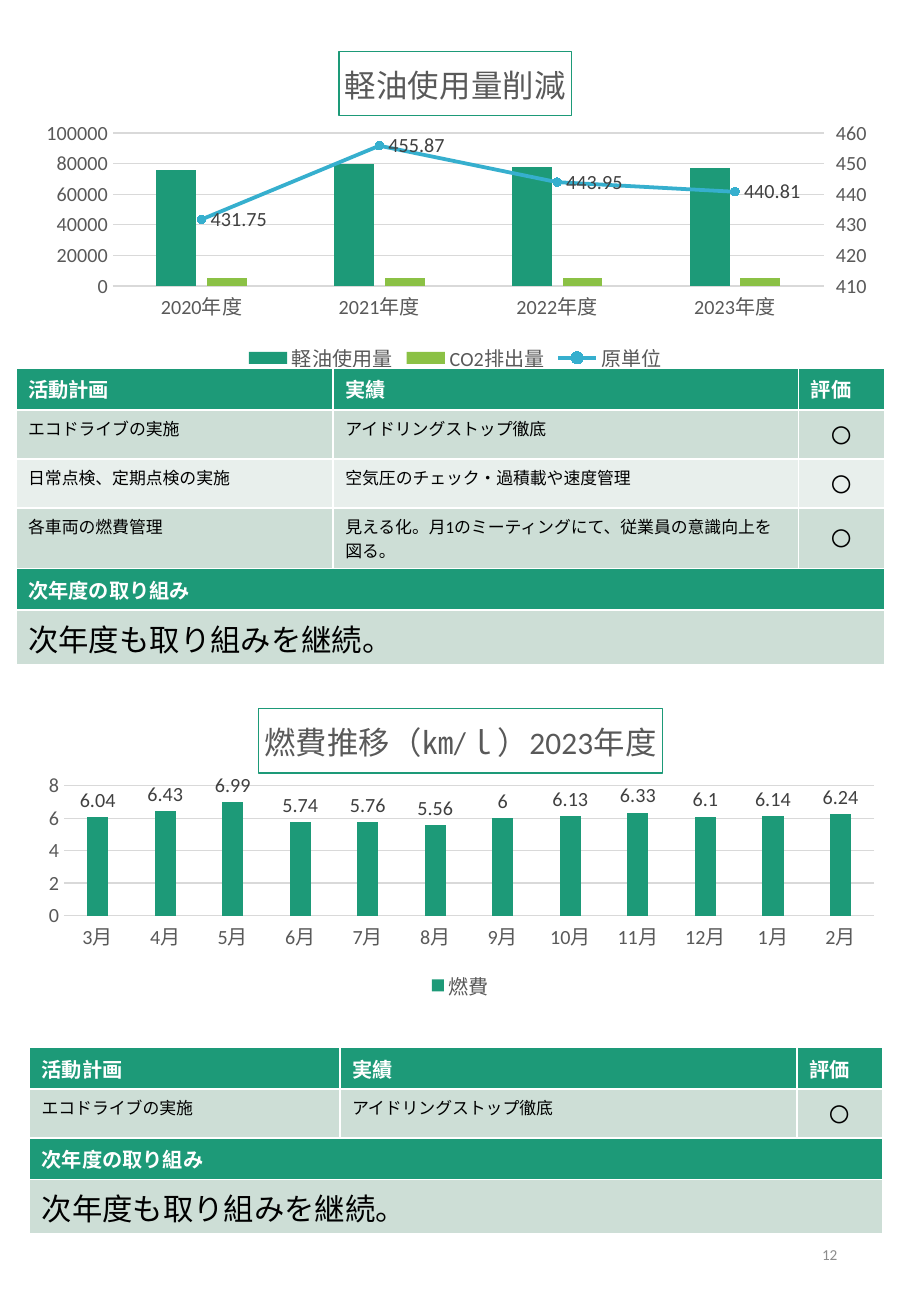
from lxml import etree
from pptx import Presentation
from pptx.chart.data import CategoryChartData
from pptx.dml.color import RGBColor
from pptx.enum.chart import (XL_CHART_TYPE, XL_LABEL_POSITION, XL_LEGEND_POSITION,
                             XL_MARKER_STYLE, XL_TICK_MARK)
from pptx.enum.text import MSO_ANCHOR, PP_ALIGN
from pptx.oxml import parse_xml
from pptx.oxml.ns import nsdecls, qn
from pptx.util import Pt

COLUMNS = XL_CHART_TYPE.COLUMN_CLUSTERED
NO_TICK = XL_TICK_MARK.NONE
BOTTOM = XL_LEGEND_POSITION.BOTTOM
RIGHT_OF, OUTSIDE = XL_LABEL_POSITION.RIGHT, XL_LABEL_POSITION.OUTSIDE_END
CIRCLE = XL_MARKER_STYLE.CIRCLE
MIDDLE = MSO_ANCHOR.MIDDLE
CENTER, ALIGN_RIGHT = PP_ALIGN.CENTER, PP_ALIGN.RIGHT

GREEN = RGBColor(0x1D, 0x9A, 0x78)
LIME = RGBColor(0x8B, 0xC1, 0x45)
BLUE = RGBColor(0x36, 0xAF, 0xCE)
BAND_DARK = RGBColor(0xCD, 0xDE, 0xD6)
BAND_LIGHT = RGBColor(0xE8, 0xEF, 0xEC)
WHITE = RGBColor(0xFF, 0xFF, 0xFF)
BLACK = RGBColor(0, 0, 0)
CHART_GREY = RGBColor(0x59, 0x59, 0x59)
LABEL_GREY = RGBColor(0x40, 0x40, 0x40)
GRID_GREY = RGBColor(0xD9, 0xD9, 0xD9)
PAGE_GREY = RGBColor(0x8C, 0x8C, 0x8C)
FONT = "Calibri"

# box is left, top, width, height; plot is x, y, w, h as shares of the box
DIESEL_CHART = dict(
    title="軽油使用量削減", box=(16, 22.5, 508, 201.5), plot=(0.1, 0.28, 0.83, 0.45),
    categories=["2020年度", "2021年度", "2022年度", "2023年度"],
    series=[("軽油使用量", [76000, 80000, 78000, 77000], GREEN),
            ("CO2排出量", [5000, 5000, 5000, 5000], LIME),
            ("原単位", [431.75, 455.87, 443.95, 440.81], BLUE)],
    top=100000, step=20000)
MILEAGE_CHART = dict(
    title="燃費推移（㎞/ｌ）2023年度", box=(17.5, 412.5, 511, 183.5),
    plot=(0.04, 0.29, 0.94, 0.42),
    categories=[f"{m}月" for m in [*range(3, 13), 1, 2]],
    series=[("燃費", [6.04, 6.43, 6.99, 5.74, 5.76, 5.56,
                    6, 6.13, 6.33, 6.1, 6.14, 6.24], GREEN)],
    top=8, step=2)

HEADER = ("活動計画", "実績", "評価")
ECO_DRIVE = ("エコドライブの実施", "アイドリングストップ徹底", "〇")
NEXT_HEADING = "次年度の取り組み"
NEXT_PLAN = "次年度も取り組みを継続。"
DIESEL_TABLE = dict(
    at=(9.5, 218), widths=(188, 276, 51), heights=(25, 29, 29, 36, 24.5, 32.5),
    actions=[ECO_DRIVE,
             ("日常点検、定期点検の実施", "空気圧のチェック・過積載や速度管理", "〇"),
             ("各車両の燃費管理",
              "見える化。月1のミーティングにて、従業員の意識向上を図る。", "〇")])
MILEAGE_TABLE = dict(
    at=(17.5, 621), widths=(184, 271, 51), heights=(24.5, 29, 24.5, 32.5),
    actions=[ECO_DRIVE])

LINE_CHART = f"""<c:lineChart {nsdecls("c")}><c:grouping val="standard"/>
<c:varyColors val="0"/><c:marker val="1"/><c:axId val="501"/><c:axId val="502"/></c:lineChart>"""
RIGHT_AXIS = f"""<c:valAx {nsdecls("c", "a")}><c:axId val="502"/><c:scaling>
<c:orientation val="minMax"/><c:max val="460"/><c:min val="410"/></c:scaling>
<c:delete val="0"/><c:axPos val="r"/><c:numFmt formatCode="General" sourceLinked="0"/>
<c:majorTickMark val="out"/><c:minorTickMark val="none"/><c:tickLblPos val="nextTo"/>
<c:spPr><a:ln><a:noFill/></a:ln></c:spPr>
<c:crossAx val="501"/><c:crosses val="max"/><c:majorUnit val="10"/></c:valAx>"""
UNSEEN_AXIS = f"""<c:catAx {nsdecls("c")}><c:axId val="501"/><c:scaling>
<c:orientation val="minMax"/></c:scaling><c:delete val="1"/><c:axPos val="b"/>
<c:crossAx val="502"/></c:catAx>"""


def style(font, size, color, bold=False):
    font.name, font.size, font.bold = FONT, Pt(size), bold
    font.color.rgb = color


def place_plot(chart, shares):
    """Fix the inner plot area at the given shares of the chart."""
    area = chart._chartSpace.find(".//" + qn("c:plotArea"))
    for old in area.findall(qn("c:layout")):
        area.remove(old)
    layout = etree.Element(qn("c:layout"))
    manual = etree.SubElement(layout, qn("c:manualLayout"))
    settings = [("layoutTarget", "inner"), ("xMode", "edge"), ("yMode", "edge")]
    for tag, value in settings + list(zip("xywh", shares)):
        etree.SubElement(manual, qn("c:" + tag)).set("val", str(value))
    area.insert(0, layout)


def add_labels(series, position):
    labels = series.data_labels
    labels.show_value = True
    labels.position = position
    style(labels.font, 11.9, LABEL_GREY)


def add_column_chart(s, title, box, plot, categories, series, top, step):
    data = CategoryChartData()
    data.categories = categories
    for name, values, _ in series:
        data.add_series(name, values)
    chart = s.shapes.add_chart(COLUMNS, *map(Pt, box), data).chart
    style(chart.font, 11.9, CHART_GREY)
    chart.has_title = True
    tf = chart.chart_title.text_frame
    tf.text = title
    style(tf.paragraphs[0].runs[0].font, 18.6, CHART_GREY)
    chart.chart_title.format.line.color.rgb = GREEN
    chart.chart_title.format.line.width = Pt(0.75)
    chart.has_legend = True
    chart.legend.position = BOTTOM
    chart.legend.include_in_layout = False
    bars = chart.plots[0]
    bars.gap_width, bars.overlap, bars.vary_by_categories = 219, -27, False
    for bar, (_, _, color) in zip(bars.series, series):
        bar.format.fill.solid()
        bar.format.fill.fore_color.rgb = color
    cat, val = chart.category_axis, chart.value_axis
    cat.major_tick_mark = val.major_tick_mark = NO_TICK
    val.minimum_scale, val.maximum_scale, val.major_unit = 0, top, step
    val.format.line.fill.background()
    for line in (cat.format.line, val.major_gridlines.format.line):
        line.color.rgb = GRID_GREY
        line.width = Pt(0.75)
    place_plot(chart, plot)
    return chart


def move_last_series_to_line(chart, color):
    """Draw the last series as a line on a second axis at the right."""
    area = chart._chartSpace.find(".//" + qn("c:plotArea"))
    bar_chart = area.find(qn("c:barChart"))
    ser = bar_chart.findall(qn("c:ser"))[-1]
    for tag in ("c:invertIfNegative", "c:spPr"):
        for el in ser.findall(qn(tag)):
            ser.remove(el)
    line_chart, right_axis, unseen_axis = map(
        parse_xml, (LINE_CHART, RIGHT_AXIS, UNSEEN_AXIS))
    line_chart.insert(2, ser)
    bar_chart.addnext(line_chart)
    area.find(qn("c:valAx")).addnext(right_axis)
    right_axis.addnext(unseen_axis)

    line = chart.plots[1].series[0]
    line.smooth = False
    line.format.line.color.rgb = color
    line.format.line.width = Pt(2.25)
    line.marker.style, line.marker.size = CIRCLE, 5
    line.marker.format.fill.solid()
    line.marker.format.fill.fore_color.rgb = color
    line.marker.format.line.color.rgb = color
    add_labels(line, RIGHT_OF)


def fill_cell(cell, text, fill, size, color=BLACK, bold=False):
    cell.fill.solid()
    cell.fill.fore_color.rgb = fill
    cell.text = text
    style(cell.text_frame.paragraphs[0].runs[0].font, size, color, bold)


def add_plan_table(s, at, widths, heights, actions):
    size = sum(widths), sum(heights)
    table = s.shapes.add_table(len(heights), len(widths), *map(Pt, at + size)).table
    for col, width in zip(table.columns, widths):
        col.width = Pt(width)
    for row, height in zip(table.rows, heights):
        row.height = Pt(height)
    for c, text in enumerate(HEADER):
        fill_cell(table.cell(0, c), text, GREEN, 12, WHITE, True)
    for r, action in enumerate(actions, 1):
        band = BAND_DARK if r % 2 else BAND_LIGHT
        for c, text in enumerate(action):
            fill_cell(table.cell(r, c), text, band, 12 if c == 2 else 10)
        mark = table.cell(r, 2)
        mark.vertical_anchor = MIDDLE
        mark.text_frame.paragraphs[0].alignment = CENTER
    heading = len(actions) + 1
    for r in (heading, heading + 1):
        table.cell(r, 0).merge(table.cell(r, 2))
    fill_cell(table.cell(heading, 0), NEXT_HEADING, GREEN, 12, WHITE, True)
    fill_cell(table.cell(heading + 1, 0), NEXT_PLAN, BAND_DARK, 18)


def main():
    prs = Presentation()
    prs.slide_width, prs.slide_height = Pt(540), Pt(780)
    s = prs.slides.add_slide(prs.slide_layouts[6])
    tf = s.shapes.add_textbox(Pt(381.5), Pt(723), Pt(122), Pt(41.5)).text_frame
    tf.word_wrap = True
    tf.vertical_anchor = MIDDLE
    tf.text = "12"
    tf.paragraphs[0].alignment = ALIGN_RIGHT
    style(tf.paragraphs[0].runs[0].font, 9, PAGE_GREY)

    diesel = add_column_chart(s, **DIESEL_CHART)
    move_last_series_to_line(diesel, BLUE)
    add_plan_table(s, **DIESEL_TABLE)
    mileage = add_column_chart(s, **MILEAGE_CHART)
    add_labels(mileage.plots[0].series[0], OUTSIDE)
    add_plan_table(s, **MILEAGE_TABLE)
    prs.save("out.pptx")


if __name__ == "__main__":
    main()
